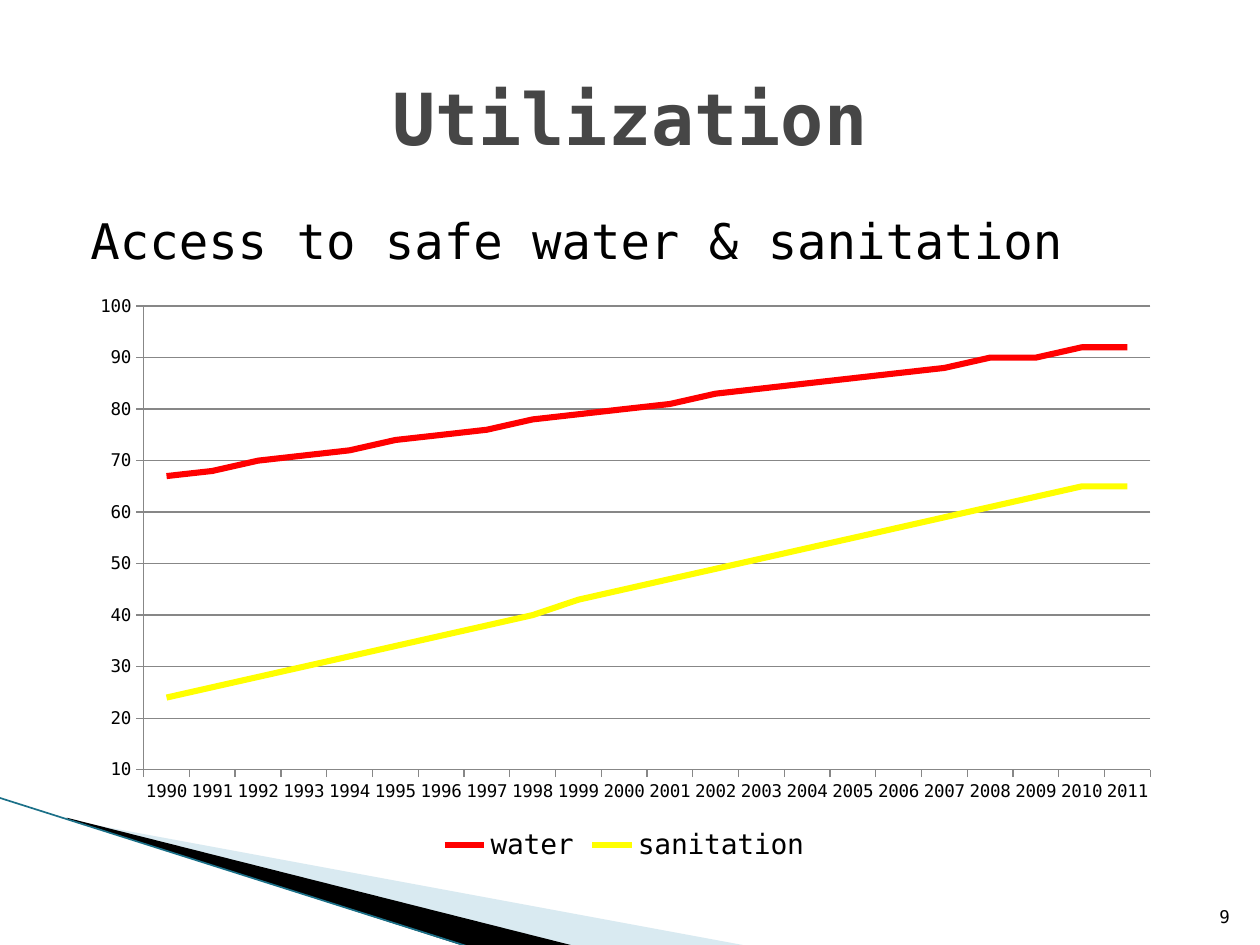
from lxml import etree
from pptx import Presentation
from pptx.chart.data import CategoryChartData
from pptx.dml.color import RGBColor
from pptx.enum.chart import XL_CHART_TYPE, XL_LEGEND_POSITION, XL_MARKER_STYLE, XL_TICK_MARK
from pptx.enum.shapes import MSO_CONNECTOR
from pptx.enum.text import MSO_ANCHOR, MSO_AUTO_SIZE, PP_ALIGN
from pptx.oxml import parse_xml
from pptx.oxml.ns import nsdecls, qn
from pptx.util import Inches, Pt

LINE = XL_CHART_TYPE.LINE
BELOW = XL_LEGEND_POSITION.BOTTOM
BARE = XL_MARKER_STYLE.NONE
OUT = XL_TICK_MARK.OUTSIDE
STRAIGHT = MSO_CONNECTOR.STRAIGHT
TOP, MID, LOW = MSO_ANCHOR.TOP, MSO_ANCHOR.MIDDLE, MSO_ANCHOR.BOTTOM
FIXED = MSO_AUTO_SIZE.NONE
LEFT, CENTER, RIGHT = PP_ALIGN.LEFT, PP_ALIGN.CENTER, PP_ALIGN.RIGHT

FONT = "DejaVu Sans Mono"
COLORS = {
    "black": "000000",
    "title": "464646",
    "pale": "A0CBDC",
    "teal": "1B7088",
    "grid": "878787",
    "water": "FF0000",
    "sanitation": "FFFF00",
}
YEARS = [str(year) for year in range(1990, 2012)]
ACCESS = {
    "water": (67, 68, 70, 71, 72, 74, 75, 76, 78, 79, 80,
              81, 83, 84, 85, 86, 87, 88, 90, 90, 92, 92),
    "sanitation": (24, 26, 28, 30, 32, 34, 36, 38, 40, 43, 45,
                   47, 49, 51, 53, 55, 57, 59, 61, 63, 65, 65),
}
CHART = (0.62, 2.27, 8.67, 4.61)
PLOT = {"x": 0.52 / CHART[2], "y": 0.16 / CHART[3],
        "w": 7.99 / CHART[2], "h": 3.68 / CHART[3]}


def rgb(name):
    return RGBColor.from_string(COLORS[name])


def apply(item, **values):
    for key, value in values.items():
        setattr(item, key, value)


class Deck:
    def __init__(self):
        self.file = Presentation()
        apply(self.file, slide_width=Inches(10), slide_height=Inches(7.5))
        self.slide = self.file.slides.add_slide(self.file.slide_layouts[5])
        self.shapes = self.slide.shapes

    def style(self, font, size, color="black", bold=False):
        apply(font, name=FONT, size=Pt(size), bold=bold)
        font.color.rgb = rgb(color)

    def fill_text(self, shape, text, size, color="black", bold=False,
                  align=LEFT, anchor=TOP):
        frame = shape.text_frame
        apply(frame, word_wrap=True, auto_size=FIXED, vertical_anchor=anchor)
        para = frame.paragraphs[0]
        para.alignment = align
        run = para.add_run()
        run.text = text
        self.style(run.font, size, color, bold)
        return para

    def title(self, box, text, size):
        left, top, width, height = map(Inches, box)
        shape = self.shapes.title
        apply(shape, left=left, top=top, width=width, height=height)
        self.fill_text(shape, text, size, "title", True, CENTER, MID)

    def text(self, box, text, size, **form):
        shape = self.shapes.add_textbox(*map(Inches, box))
        return self.fill_text(shape, text, size, **form)

    def wedge(self, box, points, color, alpha=None):
        spots = [(Inches(x), Inches(y)) for x, y in points]
        pen = self.shapes.build_freeform(*spots[0])
        pen.add_line_segments(spots[1:], close=True)
        shape = pen.convert_to_shape()
        self.frame(shape, box)
        shape.shadow.inherit = False
        shape.fill.solid()
        shape.fill.fore_color.rgb = rgb(color)
        shape.line.fill.background()
        if alpha:
            tint = shape.fill._xPr.find(".//" + qn("a:srgbClr"))
            etree.SubElement(tint, qn("a:alpha")).set("val", str(alpha * 1000))

    def frame(self, shape, box):
        left, top, width, height = map(Inches, box)
        shift = {"x": shape.left - left, "y": shape.top - top}
        outline = shape._element.find(".//" + qn("a:path"))
        for spot in outline.iter(qn("a:pt")):
            for key, step in shift.items():
                spot.set(key, str(int(spot.get(key)) + step))
        outline.set("w", str(width))
        outline.set("h", str(height))
        apply(shape, left=left, top=top, width=width, height=height)

    def line(self, start, end, color, width):
        edge = self.shapes.add_connector(STRAIGHT, *map(Inches, start + end))
        edge.line.color.rgb = rgb(color)
        edge.line.width = Pt(width)
        etree.SubElement(edge._element.spPr, qn("a:effectLst"))

    def chart(self, box, cats, series):
        data = CategoryChartData()
        data.categories = cats
        for name, values in series.items():
            data.add_series(name, values)
        frame = self.shapes.add_chart(LINE, *map(Inches, box), data)
        chart = frame.chart
        apply(chart, has_title=False, has_legend=True)
        self.style(chart.font, 10)
        apply(chart.legend, position=BELOW, include_in_layout=False)
        self.style(chart.legend.font, 16)
        chart.plots[0].vary_by_categories = False
        for item in chart.plots[0].series:
            item.smooth = False
            item.marker.style = BARE
            item.format.line.color.rgb = rgb(item.name)
            item.format.line.width = Pt(3.5)
        for axis in (chart.category_axis, chart.value_axis):
            axis.major_tick_mark = OUT
            axis.format.line.color.rgb = rgb("grid")
        scale = chart.value_axis
        apply(scale, minimum_scale=10, maximum_scale=100, major_unit=10,
              has_major_gridlines=True)
        scale.major_gridlines.format.line.color.rgb = rgb("grid")
        apply(scale.tick_labels, number_format="0", number_format_is_linked=False)
        self.place(chart)

    def place(self, chart):
        area = chart._chartSpace.chart.plotArea
        for old in area.findall(qn("c:layout")):
            area.remove(old)
        modes = "".join(f'<c:{key}Mode val="edge"/>' for key in "xy")
        sizes = "".join(f'<c:{key} val="{val}"/>' for key, val in PLOT.items())
        area.insert(0, parse_xml(
            f'<c:layout {nsdecls("c")}><c:manualLayout>'
            f'<c:layoutTarget val="inner"/>{modes}{sizes}'
            '</c:manualLayout></c:layout>'))


def main():
    deck = Deck()
    deck.wedge((0.78, 5.47, 4.16, 1.58),
               [(0.55, 6.51), (5.95, 7.51), (4.56, 7.51), (0.55, 6.5)], "pale", 40)
    deck.wedge((-0.06, 6.33, 4.16, 0.92),
               [(0.53, 6.49), (4.57, 7.51), (3.72, 7.52), (0.54, 6.5)], "black")
    deck.line((-0.01, 6.33), (3.74, 7.52), "teal", 0.95)
    deck.title((0.5, 0.3, 9, 1.25), "Utilization", 41)
    lead = deck.text((0.5, 1.62, 9, 0.72), "Access to safe water & sanitation", 28)
    for key, inch in {"marL": 0.4, "indent": -0.28}.items():
        lead._p.get_or_add_pPr().set(key, str(Inches(inch)))
    deck.chart(CHART, YEARS, ACCESS)
    deck.text((9.46, 7.01, 0.4, 0.4), "9", 10, align=RIGHT, anchor=LOW)
    deck.file.save("out.pptx")


if __name__ == "__main__":
    main()
